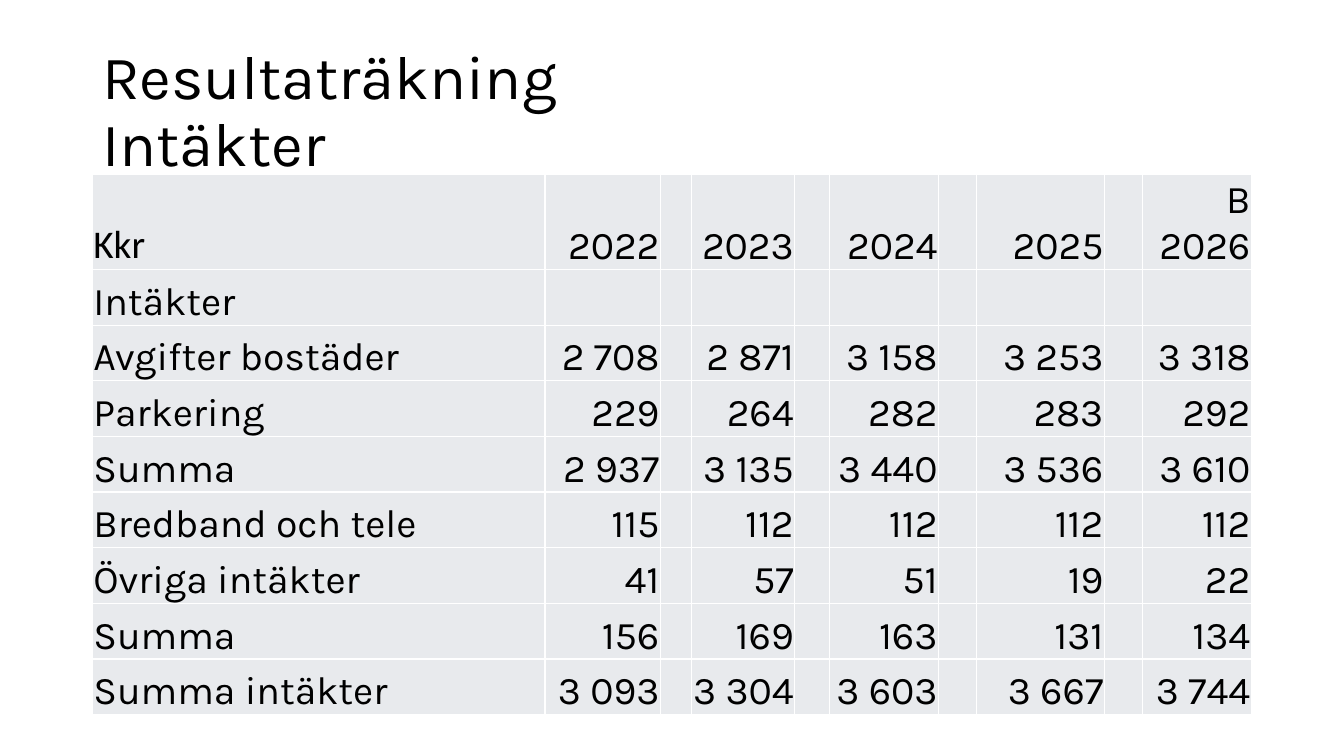
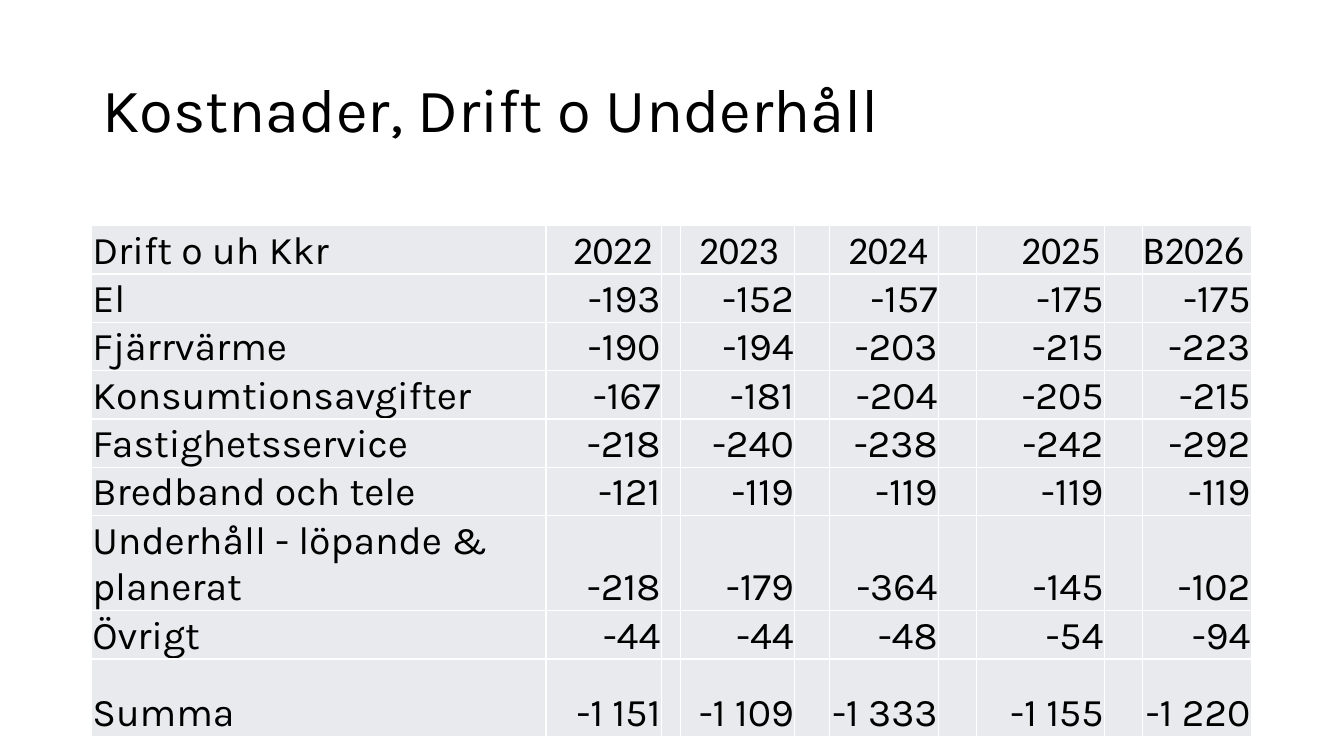
from lxml.etree import SubElement
from pptx import Presentation
from pptx.dml.color import RGBColor
from pptx.enum.text import MSO_ANCHOR, PP_ALIGN
from pptx.oxml.ns import qn
from pptx.util import Pt

EMU_PER_PX = 9525


def px(length):
    """Turn whole pixels into EMU."""
    return length * EMU_PER_PX


def color(value):
    """Turn a hex string into a colour."""
    return RGBColor.from_string(value)


def write_text(frame, text, *, size, font, ink, align=PP_ALIGN.LEFT, line_spacing=None):
    """Write text, with line breaks, into the first paragraph of a frame."""
    para = frame.paragraphs[0]
    para.alignment = align
    para.line_spacing = line_spacing
    for index, line in enumerate(text.split("\n")):
        if index:
            para.add_line_break()
        span = para.add_run()
        span.text = line
        span.font.size = Pt(size)
        span.font.name = font
        span.font.color.rgb = color(ink)


class ReportDeck:
    """Hold the report style and the current slide."""

    BODY_FONT = "Karla"
    PLAIN_FONT = "Calibri"
    INK = "000000"
    CELL_FILL = "E8EAED"
    GRID = "FFFFFF"
    TITLE_SIZE = 44
    TABLE_SIZE = 28

    def __init__(self):
        """Start an empty widescreen deck."""
        self.deck = Presentation()
        self.deck.slide_width = px(1280)
        self.deck.slide_height = px(720)
        self.page = None

    def add_page(self, title):
        """Add a blank slide with its title."""
        self.page = self.deck.slides.add_slide(self.deck.slide_layouts[6])
        box = self.page.shapes.add_textbox(px(88), px(38), px(1104), px(139))
        frame = box.text_frame
        frame.word_wrap = True
        frame.vertical_anchor = MSO_ANCHOR.MIDDLE
        write_text(frame, title, size=self.TITLE_SIZE, font=self.BODY_FONT,
                   ink=self.INK, line_spacing=0.9)

    def style_cell(self, cell):
        """Give a cell its borders, fill, margins and anchor."""
        properties = cell._tc.get_or_add_tcPr()
        for side in ("a:lnL", "a:lnR", "a:lnT", "a:lnB"):
            line = SubElement(properties, qn(side), w=str(Pt(1)))
            fill = SubElement(line, qn("a:solidFill"))
            SubElement(fill, qn("a:srgbClr"), val=self.GRID)
        cell.fill.solid()
        cell.fill.fore_color.rgb = color(self.CELL_FILL)
        cell.margin_left = cell.margin_right = cell.margin_top = px(1)
        cell.margin_bottom = 0
        cell.vertical_anchor = MSO_ANCHOR.BOTTOM

    def add_table(self, left, top, widths, heights, rows, label_font, year_font, year_indents=None):
        """Add a table with a narrow empty column between the years."""
        frame = self.page.shapes.add_table(
            len(rows), len(widths), px(left), px(top), px(sum(widths)), px(sum(heights)))
        table = frame.table
        table.first_row = table.horz_banding = False
        for column, width in zip(table.columns, widths):
            column.width = px(width)
        for row, height in zip(table.rows, heights):
            row.height = px(height)
        for cell in table.iter_cells():
            self.style_cell(cell)
        for row_index, texts in enumerate(rows):
            for text_index, text in enumerate(texts):
                cell = table.cell(row_index, max(0, 2 * text_index - 1))
                font = self.BODY_FONT
                if row_index == 0:
                    font = year_font if text_index else label_font
                align = PP_ALIGN.RIGHT if text_index else PP_ALIGN.LEFT
                if row_index == 0 and text_index and year_indents:
                    align = PP_ALIGN.LEFT
                    cell.margin_left = px(1 + year_indents[text_index - 1])
                write_text(cell.text_frame, text, size=self.TABLE_SIZE, font=font,
                           ink=self.INK, align=align)


INCOME = [
    ("Kkr", "2022", "2023", "2024", "2025", "B 2026"),
    ("Intäkter",),
    ("Avgifter bostäder", "2 708", "2 871", "3 158", "3 253", "3 318"),
    ("Parkering", "229", "264", "282", "283", "292"),
    ("Summa", "2 937", "3 135", "3 440", "3 536", "3 610"),
    ("Bredband och tele", "115", "112", "112", "112", "112"),
    ("Övriga intäkter", "41", "57", "51", "19", "22"),
    ("Summa", "156", "169", "163", "131", "134"),
    ("Summa intäkter", "3 093", "3 304", "3 603", "3 667", "3 744"),
]

COSTS = [
    ("Drift o uh Kkr", "2022", "2023", "2024", "2025", "B2026"),
    ("El", "-193", "-152", "-157", "-175", "-175"),
    ("Fjärrvärme", "-190", "-194", "-203", "-215", "-223"),
    ("Konsumtionsavgifter", "-167", "-181", "-204", "-205", "-215"),
    ("Fastighetsservice", "-218", "-240", "-238", "-242", "-292"),
    ("Bredband och tele", "-121", "-119", "-119", "-119", "-119"),
    ("Underhåll - löpande & planerat", "-218", "-179", "-364", "-145", "-102"),
    ("Övrigt", "-44", "-44", "-48", "-54", "-94"),
    ("Summa", "-1 151", "-1 109", "-1 333", "-1 155", "-1 220"),
]

LATER_WIDTHS = [33, 104, 36, 122, 36, 104]


def main():
    """Build and save the report."""
    report = ReportDeck()
    report.add_page("Resultaträkning\nIntäkter")
    report.add_table(88, 166, [431, 110, 30, 98] + LATER_WIDTHS, [53] * len(INCOME), INCOME,
                     label_font=report.PLAIN_FONT, year_font=report.BODY_FONT)
    report.add_page("Kostnader, Drift o Underhåll")
    report.add_table(87, 215, [433, 110, 18, 109] + LATER_WIDTHS, [46] * 6 + [88, 46, 74], COSTS,
                     label_font=report.BODY_FONT, year_font=report.PLAIN_FONT,
                     year_indents=[25, 17, 17, 42, 0])
    report.deck.save("out.pptx")


if __name__ == "__main__":
    main()
